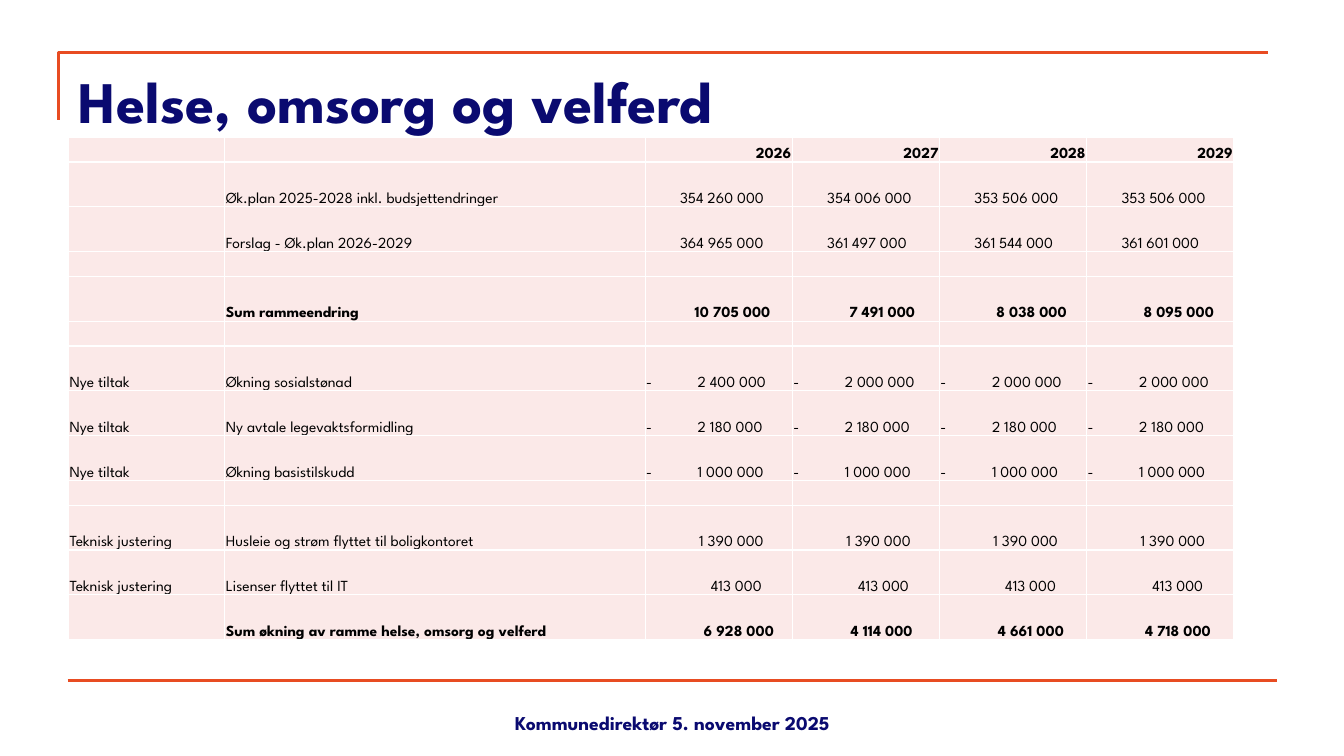
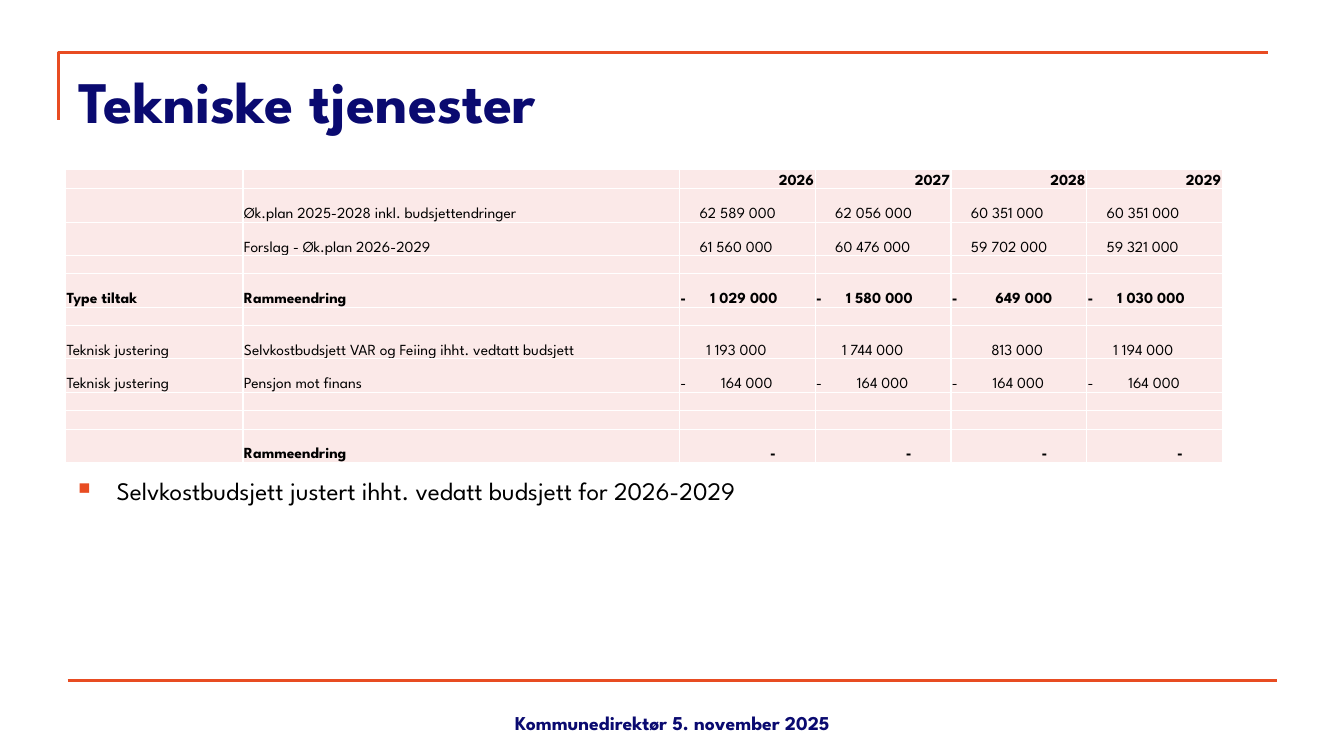
from dataclasses import dataclass

from lxml.etree import SubElement as Sub
from pptx import Presentation
from pptx.dml.color import RGBColor as Rgb
from pptx.enum.shapes import MSO_CONNECTOR as Link
from pptx.enum.text import MSO_ANCHOR as Anchor, PP_ALIGN as Align
from pptx.oxml.ns import qn
from pptx.util import Emu, Inches, Pt

# Shared look
FONT = "League Spartan"
NAVY, RED, PINK, WHITE, BLACK = "0A0A70", "E84C22", "FBE9E8", "FFFFFF", "000000"
WIDE, HIGH = Inches(13.33), Inches(7.5)
FOOTER = "Kommunedirektør 5. november 2025"
YEARS = ("2026", "2027", "2028", "2029")
DIGIT = 0.05  # width of one digit, as a share of a year column


@dataclass
class Row:
    kind: str = ""
    label: str = ""
    sums: tuple[str, ...] = ("",) * 4
    start: float = 0  # where the sums start, as a share of their column
    bold: bool = False
    head: bool = False
    tall: bool = True


@dataclass
class Plan:
    left: float  # lengths are percent of the slide's size
    top: float
    cols: tuple[float, float, float]  # kind, label, each year
    low: float
    tall: float
    rows: list[Row]


def across(share: float) -> Emu:
    return Emu(round(WIDE * share / 100))


def down(share: float) -> Emu:
    return Emu(round(HIGH * share / 100))


def paint(code: str) -> Rgb:
    return Rgb.from_string(code)


def write(frame, text: str, *, size: float, color: str = BLACK,
          bold: bool = False, align=Align.LEFT, anchor=Anchor.TOP):
    """Put one formatted paragraph in a text frame."""
    frame.word_wrap = True
    frame.vertical_anchor = anchor
    para = frame.paragraphs[0]
    para.alignment = align
    if text:
        run = para.add_run()
        run.text = text
        font = run.font
        font.name, font.size, font.bold = FONT, Pt(size), bold
        font.color.rgb = paint(color)
    else:
        Sub(para._p, qn("a:endParaRPr"), sz=str(round(size * 100)))
    return para


def place(shape, left: float, top: float, width: float, height: float) -> None:
    shape.left, shape.top = across(left), down(top)
    shape.width, shape.height = across(width), down(height)


def box(slide, left: float, top: float, width: float, height: float):
    return slide.shapes.add_textbox(
        across(left), down(top), across(width), down(height)).text_frame


def stroke(shape) -> None:
    shape.line.color.rgb = paint(RED)
    shape.line.width = Pt(2.25)


def start_page(deck, title: str):
    """Add a slide with its frame lines, title and footer."""
    slide = deck.slides.add_slide(deck.slide_layouts[5])
    pen = slide.shapes.build_freeform(across(4.35), down(15.87), scale=1.0)
    pen.add_line_segments([(across(4.35), down(6.93)),
                           (across(94.37), down(6.93))], close=False)
    angle = pen.convert_to_shape()
    angle.shadow.inherit = False
    angle.fill.background()
    stroke(angle)

    rule = slide.shapes.add_connector(
        Link.STRAIGHT, across(5.03), down(90), across(95.05), down(90))
    Sub(rule._element.spPr, qn("a:effectLst"))
    stroke(rule)

    place(slide.shapes.title, 5.1, 8, 90, 14.4)
    frame = slide.shapes.title.text_frame
    write(frame, title, size=42, color=NAVY, bold=True, anchor=Anchor.MIDDLE)
    frame.margin_bottom = Inches(0.35)  # lifts the title clear of the table
    write(box(slide, 34.21, 91.07, 31.66, 6.67), FOOTER, size=14, color=NAVY,
          bold=True, align=Align.CENTER, anchor=Anchor.BOTTOM)
    return slide


def style(cell) -> None:
    """Give a cell white borders, pink fill and thin margins."""
    props = cell._tc.get_or_add_tcPr()
    for side in ("lnL", "lnR", "lnT", "lnB"):
        line = Sub(props, qn(f"a:{side}"), w=str(Pt(1)))
        fill = Sub(line, qn("a:solidFill"))
        Sub(fill, qn("a:srgbClr"), val=WHITE)
    cell.fill.solid()
    cell.fill.fore_color.rgb = paint(PINK)
    cell.margin_left = cell.margin_right = cell.margin_top = Inches(0.01)
    cell.margin_bottom = 0


def shift(para, gap: int, tab: bool) -> None:
    """Start a sum at a tab stop after its sign, or at an indent."""
    props = para._p.get_or_add_pPr()
    if tab:
        stops = Sub(props, qn("a:tabLst"))
        Sub(stops, qn("a:tab"), pos=str(gap), algn="l")
    else:
        props.set("marL", str(gap))
        props.set("indent", "0")


def add_plan(slide, plan: Plan) -> None:
    kind, label, year = plan.cols
    widths = (kind, label) + (year,) * len(YEARS)
    heights = [plan.tall if row.tall else plan.low for row in plan.rows]
    table = slide.shapes.add_table(
        len(heights), len(widths), across(plan.left), down(plan.top),
        across(sum(widths)), down(sum(heights))).table
    table.first_row = table.horz_banding = False
    for col, width in zip(table.columns, widths):
        col.width = across(width)
    for y, (row, height) in enumerate(zip(plan.rows, heights)):
        table.rows[y].height = down(height)
        longest = max(len(text.lstrip("-")) for text in row.sums)
        for x, text in enumerate((row.kind, row.label, *row.sums)):
            cell = table.cell(y, x)
            style(cell)
            signed = len(text) > 1 and text[0] == "-"
            shown = "-\t" + text[1:] if signed else text
            para = write(cell.text_frame, shown, size=11 if text else 8,
                         bold=row.bold,
                         align=Align.RIGHT if row.head else Align.LEFT)
            cell.vertical_anchor = Anchor.BOTTOM
            if x > 1 and row.start:
                lack = longest - len(text.lstrip("-"))
                shift(para, across(year * (row.start + DIGIT * lack)), signed)


def add_point(slide, text: str) -> None:
    """Add a square-bulleted line under the table."""
    para = write(box(slide, 5.1, 62.27, 90, 6), text, size=18)
    props = para._p.get_or_add_pPr()
    props.set("marL", str(Inches(0.38)))
    props.set("indent", str(-Inches(0.38)))
    Sub(Sub(props, qn("a:buClr")), qn("a:srgbClr"), val=RED)
    Sub(props, qn("a:buSzPct"), val="65000")
    Sub(props, qn("a:buChar"), char="■")


# Table content
HEAD = Row(sums=YEARS, bold=True, head=True, tall=False)
GAP = Row(tall=False)
OLD, NEW = "Øk.plan 2025-2028 inkl. budsjettendringer", "Forslag - Øk.plan 2026-2029"
STEP, TECH = "Nye tiltak", "Teknisk justering"

HEALTH = Plan(5.1, 18.13, (11.63, 31.28, 10.95), 3.29, 5.93, [
    HEAD,
    Row("", OLD, ("354 260 000", "354 006 000", "353 506 000", "353 506 000"), 0.23),
    Row("", NEW, ("364 965 000", "361 497 000", "361 544 000", "361 601 000"), 0.23),
    GAP,
    Row("", "Sum rammeendring",
        ("10 705 000", "7 491 000", "8 038 000", "8 095 000"), 0.33, bold=True),
    GAP,
    Row(STEP, "Økning sosialstønad", ("-2 400 000",) + ("-2 000 000",) * 3, 0.35),
    Row(STEP, "Ny avtale legevaktsformidling", ("-2 180 000",) * 4, 0.35),
    Row(STEP, "Økning basistilskudd", ("-1 000 000",) * 4, 0.35),
    GAP,
    Row(TECH, "Husleie og strøm flyttet til boligkontoret", ("1 390 000",) * 4, 0.36),
    Row(TECH, "Lisenser flyttet til IT", ("413 000",) * 4, 0.44),
    Row("", "Sum økning av ramme helse, omsorg og velferd",
        ("6 928 000", "4 114 000", "4 661 000", "4 718 000"), 0.39, bold=True),
])

WORKS = Plan(4.88, 22.4, (13.2, 32.48, 10.1), 2.45, 4.4, [
    HEAD,
    Row("", OLD, ("62 589 000", "62 056 000", "60 351 000", "60 351 000"), 0.14),
    Row("", NEW, ("61 560 000", "60 476 000", "59 702 000", "59 321 000"), 0.14),
    GAP,
    Row("Type tiltak", "Rammeendring",
        ("-1 029 000", "-1 580 000", "-649 000", "-1 030 000"), 0.22, bold=True),
    GAP,
    Row(TECH, "Selvkostbudsjett VAR og Feiing ihht. vedtatt budsjett",
        ("1 193 000", "1 744 000", "813 000", "1 194 000"), 0.19),
    Row(TECH, "Pensjon mot finans", ("-164 000",) * 4, 0.3),
    GAP,
    GAP,
    Row("", "Rammeendring", ("-",) * 4, 0.66, bold=True),
])


def main() -> None:
    deck = Presentation()
    deck.slide_width, deck.slide_height = WIDE, HIGH

    # Health and care
    add_plan(start_page(deck, "Helse, omsorg og velferd"), HEALTH)

    # Technical services
    slide = start_page(deck, "Tekniske tjenester")
    add_plan(slide, WORKS)
    add_point(slide, "Selvkostbudsjett justert ihht. vedatt budsjett for 2026-2029")

    deck.save("out.pptx")


if __name__ == "__main__":
    main()
